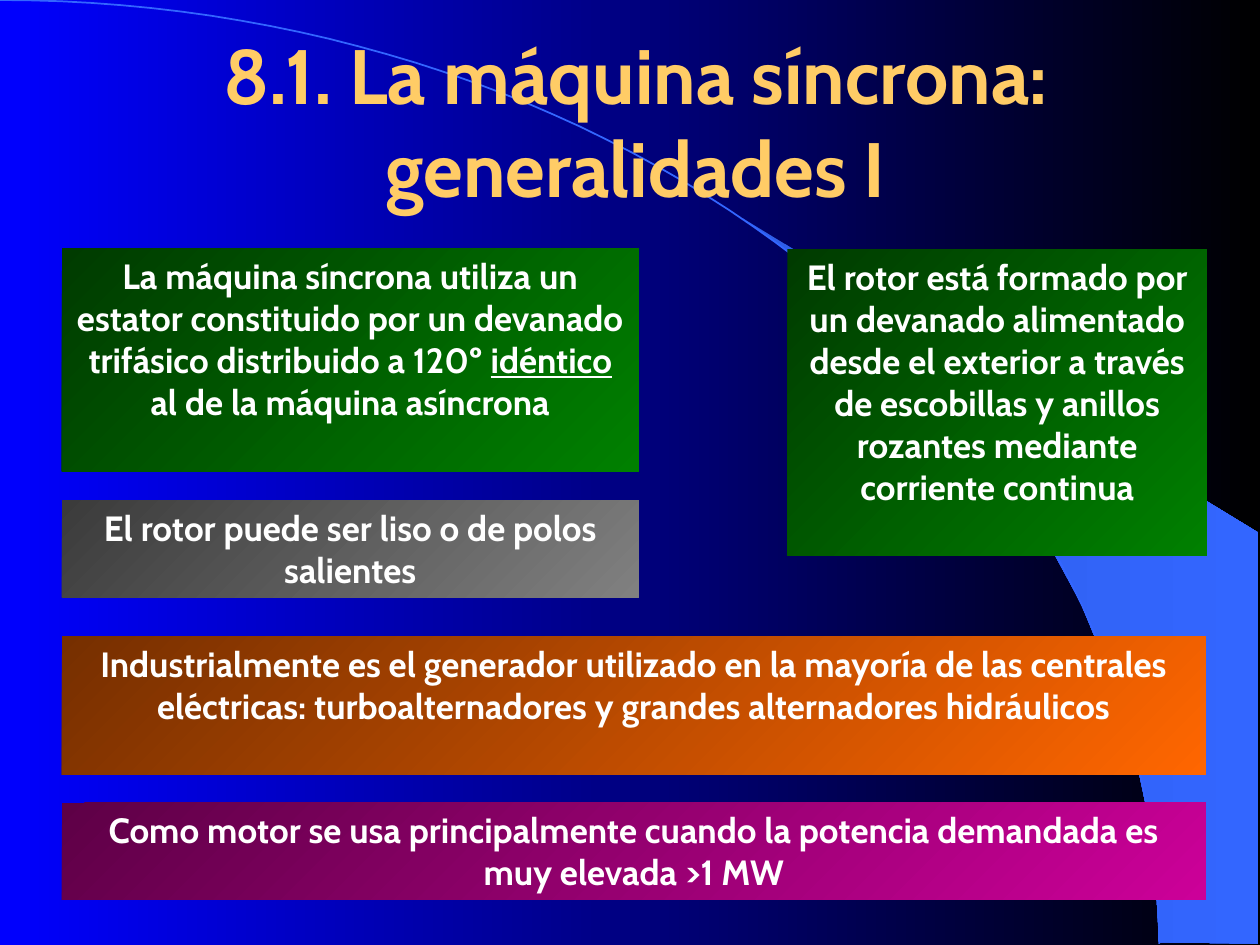
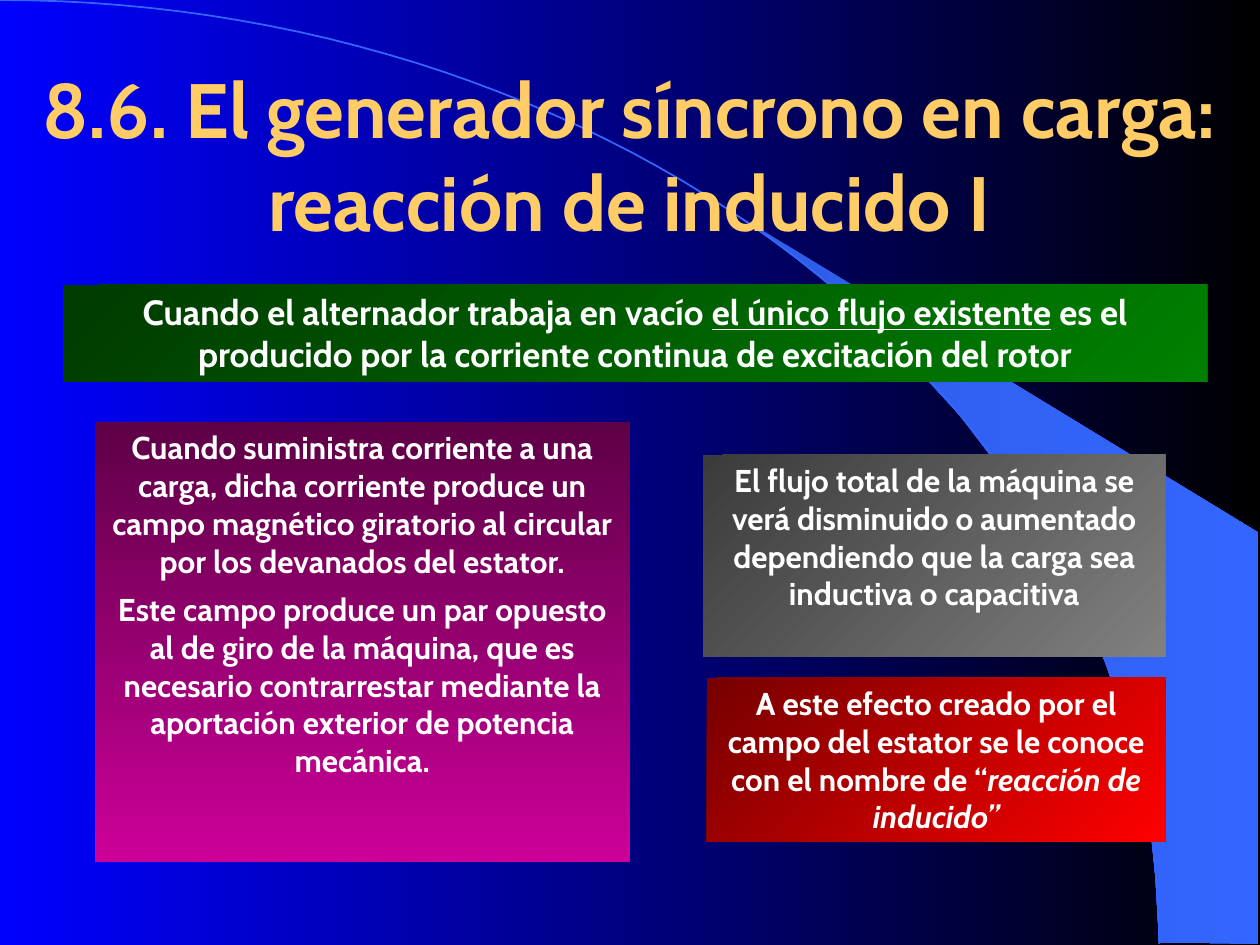
"""Build two slides about the synchronous machine."""
import math

import pptx
import pptx.dml.color
import pptx.enum.shapes
import pptx.enum.text
import pptx.util

RGBColor = pptx.dml.color.RGBColor
BLUE = RGBColor(0x00, 0x00, 0xFF)
BLACK = RGBColor(0x00, 0x00, 0x00)
WHITE = RGBColor(0xFF, 0xFF, 0xFF)
GOLD = RGBColor(0xFF, 0xCC, 0x66)
SKY = RGBColor(0x33, 0x66, 0xFF)
DEEP_SKY = RGBColor(0x2E, 0x5D, 0xE7)
GREEN = (RGBColor(0x00, 0x3B, 0x00), RGBColor(0x00, 0x80, 0x00))
GRAY = (RGBColor(0x3B, 0x3B, 0x3B), RGBColor(0x80, 0x80, 0x80))
ORANGE = (RGBColor(0x76, 0x2F, 0x00), RGBColor(0xFF, 0x66, 0x00))
MAGENTA = (RGBColor(0x5E, 0x00, 0x46), RGBColor(0xCC, 0x00, 0x99))
RED = (RGBColor(0x76, 0x00, 0x00), RGBColor(0xFF, 0x00, 0x00))

FONT = "Cabin"
COLUMNS, ROWS = 100, 75
ARC_WIDTH, ARC_HEIGHT, ARC_STEPS = 92, 74.9, 60
SWOOSH = [
    (92, 74.8), (99.9, 74.9), (99.9, 42.3), (58.9, 17.3), (62.4, 19.9),
    (65.3, 22.2), (68.5, 25), (71.6, 28), (76.2, 33), (80.3, 38.4),
    (83.2, 43.1), (85.8, 47.9), (87.8, 52.8), (89.3, 57.2), (90.3, 60.9),
    (91.3, 65.6), (91.7, 69.6),
]


class Deck:
    """Holds the shared style and the current slide."""

    def __init__(self):
        self.presentation = pptx.Presentation()
        self.presentation.slide_width = pptx.util.Inches(10)
        self.presentation.slide_height = pptx.util.Inches(7.5)
        self.column = self.presentation.slide_width / COLUMNS
        self.row = self.presentation.slide_height / ROWS
        self.slide = None
        self.gradient(self.presentation.slide_master.background.fill, (BLUE, BLACK), 0)

    def frame(self, left, top, width, height):
        """Turn grid units into lengths."""
        return (round(left * self.column), round(top * self.row),
                round(width * self.column), round(height * self.row))

    def gradient(self, fill, colors, angle):
        """Apply a two-colour gradient turned clockwise by the angle."""
        fill.gradient()
        fill.gradient_angle = (360 - angle) % 360
        for stop, color in zip(fill.gradient_stops, colors):
            stop.color.rgb = color

    def outline(self, points, close):
        """Draw a freeform through grid points and move it to the master."""
        scale = (self.column / 100, self.row / 100)
        (x, y), *others = [(round(x * 100), round(y * 100)) for x, y in points]
        builder = self.slide.shapes.build_freeform(x, y, scale)
        builder.add_line_segments(others, close=close)
        shape = builder.convert_to_shape()
        shape.shadow.inherit = False
        self.presentation.slide_master.shapes.element.append(shape.element)
        return shape

    def decorate_master(self):
        """Draw the swoosh and the thin arc behind every slide."""
        swoosh = self.outline(SWOOSH, close=True)
        self.gradient(swoosh.fill, (DEEP_SKY, SKY), 0)
        swoosh.line.fill.background()
        angles = [math.pi / 2 * step / ARC_STEPS for step in range(ARC_STEPS + 1)]
        arc = self.outline([(ARC_WIDTH * math.sin(angle), ARC_HEIGHT * (1 - math.cos(angle)))
                            for angle in angles], close=False)
        arc.fill.background()
        arc.line.color.rgb = SKY
        arc.line.width = pptx.util.Pt(1)

    def format_paragraph(self, paragraph, size, color):
        """Centre a paragraph and set its font."""
        paragraph.alignment = pptx.enum.text.PP_ALIGN.CENTER
        paragraph.font.name = FONT
        paragraph.font.size = pptx.util.Pt(size)
        paragraph.font.bold = True
        paragraph.font.color.rgb = color

    def add_slide(self, title, left, top, width, height=12.5):
        """Start a slide and place its title."""
        self.slide = self.presentation.slides.add_slide(self.presentation.slide_layouts[5])
        if len(self.presentation.slides) == 1:
            self.decorate_master()
        shape = self.slide.shapes.title
        shape.left, shape.top, shape.width, shape.height = self.frame(left, top, width, height)
        text_frame = shape.text_frame
        text_frame.text = title
        text_frame.auto_size = pptx.enum.text.MSO_AUTO_SIZE.NONE
        text_frame.vertical_anchor = pptx.enum.text.MSO_ANCHOR.MIDDLE
        self.format_paragraph(text_frame.paragraphs[0], 44, GOLD)

    def add_box(self, place, colors, *paragraphs, size=20, angle=45, space=0):
        """Add a gradient box; each paragraph is a list of (text, style) runs."""
        shape = self.slide.shapes.add_shape(
            pptx.enum.shapes.MSO_SHAPE.RECTANGLE, *self.frame(*place))
        shape.shadow.inherit = False
        shape.line.fill.background()
        self.gradient(shape.fill, colors, angle)
        text_frame = shape.text_frame
        text_frame.word_wrap = True
        text_frame.vertical_anchor = pptx.enum.text.MSO_ANCHOR.TOP
        for index, runs in enumerate(paragraphs):
            paragraph = text_frame.add_paragraph() if index else text_frame.paragraphs[0]
            self.format_paragraph(paragraph, size, WHITE)
            paragraph.space_before = pptx.util.Pt(space)
            for text, style in runs:
                run = paragraph.add_run()
                run.text = text
                if style:
                    setattr(run.font, style, True)


def plain(text):
    """Return a paragraph of one unstyled run."""
    return [(text, None)]


def build_generalities(deck):
    """Build the slide on the synchronous machine in general."""
    left, half, full = 4.9, 45.8, 90.8
    deck.add_slide("8.1. La máquina síncrona: generalidades I", 1.7, 3.3, 97.5)
    deck.add_box((left, 19.7, half, 17.7), GREEN, [
        ("La máquina síncrona utiliza un estator constituido por un devanado "
         "trifásico distribuido a 120º ", None),
        ("idéntico", "underline"),
        (" al de la máquina asíncrona", None)])
    deck.add_box((62.5, 19.8, 33.3, 24.3), GREEN, plain(
        "El rotor está formado por un devanado alimentado desde el exterior a "
        "través de escobillas y anillos rozantes mediante corriente continua"))
    deck.add_box((left, 39.7, half, 7.7), GRAY, plain(
        "El rotor puede ser liso o de polos salientes"))
    deck.add_box((left, 50.5, full, 11), ORANGE, plain(
        "Industrialmente es el generador utilizado en la mayoría de las centrales "
        "eléctricas: turboalternadores y grandes alternadores hidráulicos"))
    deck.add_box((left, 63.7, full, 7.7), MAGENTA, plain(
        "Como motor se usa principalmente cuando la potencia demandada es muy "
        "elevada >1 MW"))


def build_armature_reaction(deck):
    """Build the slide on the loaded generator."""
    deck.add_slide("8.6. El generador síncrono en carga: reacción de inducido I",
                   0.8, 6, 98.3)
    deck.add_box((5, 22.6, 90.8, 7.7), GREEN, [
        ("Cuando el alternador trabaja en vacío ", None),
        ("el único flujo existente", "underline"),
        (" es el producido por la corriente continua de excitación del rotor", None)],
        space=6)
    deck.add_box((55.8, 36.1, 36.7, 16), GRAY, plain(
        "El flujo total de la máquina se verá disminuido o aumentado dependiendo "
        "que la carga sea inductiva o capacitiva"), size=18, space=6)
    deck.add_box((7.5, 33.5, 42.5, 34.9), MAGENTA, plain(
        "Cuando suministra corriente a una carga, dicha corriente produce un campo "
        "magnético giratorio al circular por los devanados del estator."), plain(
        "Este campo produce un par opuesto al de giro de la máquina, que es "
        "necesario contrarrestar mediante la aportación exterior de potencia "
        "mecánica."), size=18, angle=90, space=6)
    deck.add_box((56.1, 53.8, 36.4, 13), RED, [
        ("A este efecto creado por el campo del estator se le conoce con el "
         "nombre de “", None),
        ("reacción de inducido”", "italic")], size=18, space=6)


def main():
    """Build and save the presentation."""
    deck = Deck()
    build_generalities(deck)
    build_armature_reaction(deck)
    deck.presentation.save("out.pptx")


if __name__ == "__main__":
    main()
